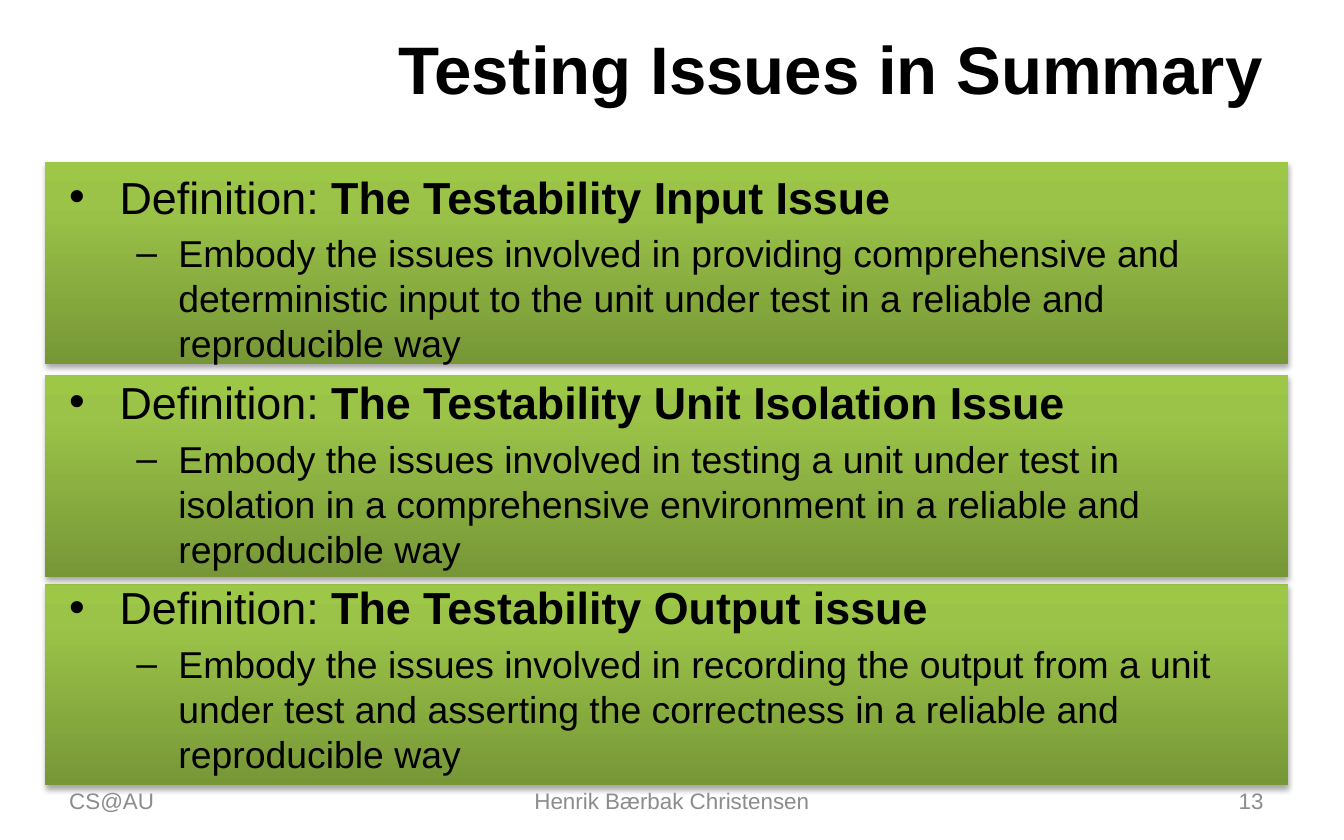
"""Build a slide that sums up three testability issues."""
from dataclasses import dataclass

from lxml.etree import SubElement as Sub
from pptx import Presentation
from pptx.dml.color import RGBColor as RGB
from pptx.enum.shapes import MSO_SHAPE as Shape
from pptx.enum.text import MSO_ANCHOR as Anchor, MSO_AUTO_SIZE as Fit, PP_ALIGN as Align
from pptx.oxml.ns import qn
from pptx.util import Emu, Pt

PX = 9525


@dataclass(frozen=True)
class Theme:
    font: str = "Arial"
    ink: str = "000000"
    grey: str = "8C8C8C"
    shade: tuple = ((0, "779737"), (80, "9BC348"), (100, "9DC746"))
    title: int = 36
    head: int = 24
    text: int = 20
    foot: int = 12


def box(*nums):
    return [Emu(n * PX) for n in nums]


def write(para, text, size, color, bold=False):
    run = para.add_run()
    run.text = text
    form = {"name": theme.font, "size": Pt(size), "bold": bold}
    for key, val in form.items():
        setattr(run.font, key, val)
    run.font.color.rgb = RGB.from_string(color)


theme = Theme()
deck = Presentation()
deck.slide_width, deck.slide_height = box(960, 600)
slide = deck.slides.add_slide(deck.slide_layouts[5])
shapes = slide.shapes

for top in (417, 268, 116):
    panel = shapes.add_shape(Shape.RECTANGLE, *box(32, top, 888, 144))
    panel.line.fill.background()
    panel.fill.gradient()
    panel.fill.gradient_angle = 90
    stops = panel._element.spPr.find(".//" + qn("a:gsLst"))
    for old in list(stops):
        stops.remove(old)
    for pos, color in theme.shade:
        stop = Sub(stops, qn("a:gs"), pos=str(pos * 1000))
        Sub(stop, qn("a:srgbClr"), val=color)
    panel.shadow.inherit = False
    glow = panel._element.spPr.find(qn("a:effectLst"))
    cast = Sub(glow, qn("a:outerShdw"), blurRad=str(Pt(3.1)), dist=str(Pt(1.8)),
               dir="5400000", rotWithShape="0")
    tint = Sub(cast, qn("a:srgbClr"), val="000000")
    Sub(tint, qn("a:alpha"), val="35000")

title = shapes.title
title.left, title.top, title.width, title.height = box(48, 17, 864, 63)
frame = title.text_frame
for key, val in {"word_wrap": True, "auto_size": Fit.NONE,
                 "vertical_anchor": Anchor.MIDDLE}.items():
    setattr(frame, key, val)
para = frame.paragraphs[0]
para.alignment = Align.RIGHT
write(para, "Testing Issues in Summary", theme.title, theme.ink, True)

issues = (
    ("The Testability Input Issue",
     "Embody the issues involved in providing comprehensive and deterministic "
     "input to the unit under test in a reliable and reproducible way"),
    ("The Testability Unit Isolation Issue",
     "Embody the issues involved in testing a unit under test in isolation "
     "in a comprehensive environment in a reliable and reproducible way"),
    ("The Testability Output issue",
     "Embody the issues involved in recording the output from a unit under test "
     "and asserting the correctness in a reliable and reproducible way"),
)
levels = (
    {"mark": "•", "left": 36, "hang": 36, "size": theme.head, "pitch": 28.9},
    {"mark": "–", "left": 78, "hang": 30, "size": theme.text, "pitch": 24.1},
)
frame = shapes.add_textbox(*box(40, 116, 872, 438)).text_frame
frame.word_wrap = True
for num, (name, text) in enumerate(issues):
    rows = ((("Definition: ", False), (name, True)), ((text, False),))
    for depth, (runs, form) in enumerate(zip(rows, levels)):
        first = num == depth == 0
        para = frame.paragraphs[0] if first else frame.add_paragraph()
        props = para._p.get_or_add_pPr()
        props.set("marL", str(form["left"] * PX))
        props.set("indent", str(-form["hang"] * PX))
        Sub(props, qn("a:buFont"), typeface=theme.font)
        Sub(props, qn("a:buChar"), char=form["mark"])
        para.level = depth
        para.line_spacing = Pt(form["pitch"])
        para.space_before = Pt(0 if first else form["size"] * 0.2)
        for part, bold in runs:
            write(para, part, form["size"], theme.ink, bold)

for left, width, align, text in (
    (40, 224, Align.LEFT, "CS@AU"),
    (328, 304, Align.CENTER, "Henrik Bærbak Christensen"),
    (688, 224, Align.RIGHT, "13"),
):
    frame = shapes.add_textbox(*box(left, 556, width, 32)).text_frame
    frame.word_wrap = True
    frame.vertical_anchor = Anchor.MIDDLE
    para = frame.paragraphs[0]
    para.alignment = align
    write(para, text, theme.foot, theme.grey)

deck.save("out.pptx")
